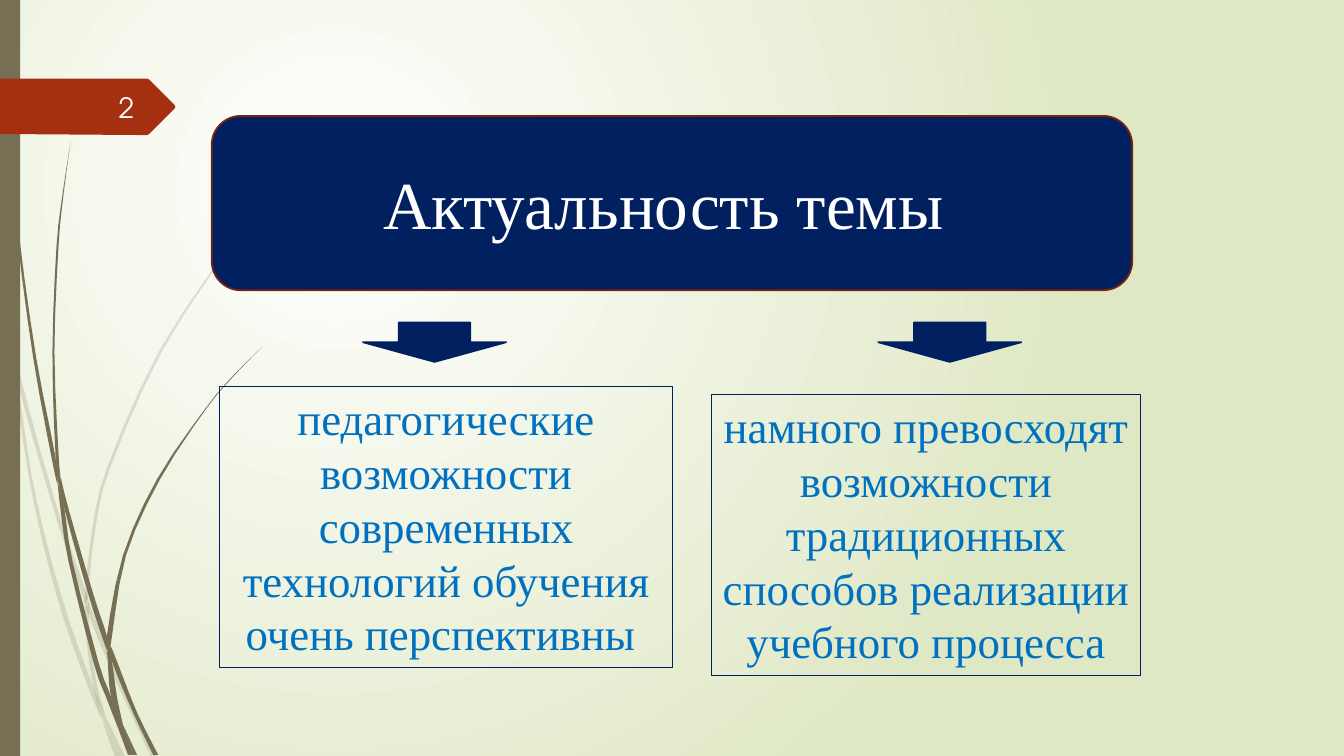
import pptx
import pptx.util
import pptx.dml.color
import pptx.enum.shapes
import pptx.enum.text
import pptx.oxml
import pptx.oxml.ns
from lxml import etree

Inches = pptx.util.Inches
KIND = pptx.enum.shapes.MSO_SHAPE
ALIGN = pptx.enum.text.PP_ALIGN
ANCHOR = pptx.enum.text.MSO_ANCHOR
FIT = pptx.enum.text.MSO_AUTO_SIZE

HEX = {"pale": "FFFFFF", "green": "DFE8C4", "olive": "766F54", "rust": "A53010",
       "edge": "7A240C", "navy": "002060", "blue": "0070C0", "white": "FFFFFF",
       "page": "FEFFFF"}
SERIF = "Times New Roman"
SANS = "TeX Gyre Adventor"

TITLE = ("Актуальность темы ", (2.1, 1.15, 9.13, 1.73))
CLAIMS = [
    ("педагогические возможности современных технологий обучения очень перспективны ",
     (2.18, 3.83, 4.49, 2.79)),
    ("намного превосходят возможности традиционных способов реализации учебного процесса",
     (7.06, 3.91, 4.25, 2.79)),
]
ARROWS = [(3.6, 3.2, 1.42, 0.39), (8.71, 3.2, 1.42, 0.39)]
PAGE = ("2", (0.58, 0.86, 0.85, 0.4))
BADGE = [(0, 0.78), (1.46, 0.78), (1.48, 0.79), (1.73, 1.04), (1.74, 1.06),
         (1.73, 1.08), (1.48, 1.33), (1.46, 1.34), (1.36, 1.34), (0, 1.33)]

FAINT = [
    [(2.82, 0, 0), (2.99, 0, 0.04), (3.22, 0.06, 0.09), (3.5, 0.11, 0.11)],
    [(3.45, 0.14, 0.14), (3.76, 0.17, 0.21), (4.33, 0.32, 0.36), (5.21, 0.58, 0.62),
     (5.86, 0.8, 0.85), (5.99, 0.84, 0.84)],
    [(5.96, 0.88, 0.88), (6.1, 0.88, 0.93), (6.52, 1.05, 1.1), (6.93, 1.23, 1.27),
     (7.51, 1.5, 1.55)],
    [(7.11, 1.05, 1.05), (7.51, 1.19, 1.24)],
    [(3.5, 0.11, 0.11), (3.76, 0.14, 0.17), (4.69, 0.28, 0.31), (5.45, 0.44, 0.48),
     (6.2, 0.65, 0.7), (6.83, 0.88, 0.93), (7.14, 1.01, 1.01)],
    [(5.99, 0.84, 0.84), (6.1, 0.84, 0.88), (6.46, 0.87, 0.91), (6.83, 0.93, 0.97),
     (7.11, 1.05, 1.05)],
    [(1.53, 3.12, 3.12), (1.98, 2.67, 2.68), (2.45, 2.27, 2.29), (3.48, 1.58, 1.61),
     (4.62, 1.07, 1.1), (5.22, 0.92, 0.95), (5.84, 0.85, 0.88), (5.96, 0.88, 0.88)],
    [(7.14, 1.01, 1.01), (7.51, 1.14, 1.19)],
    [(5.86, 0.85, 0.85), (5.98, 0.84, 0.88), (6.1, 0.88, 0.88)],
    [(6.83, 0.93, 0.93), (7.09, 1, 1.04), (7.51, 1.19, 1.19)],
]
DARK = [
    [(0, 0.03, 0.04), (1.1, 0.07, 0.08), (2.33, 0.17, 0.19), (3.55, 0.33, 0.36),
     (4.53, 0.51, 0.55), (4.81, 0.57, 0.57)],
    [(4.72, 0.6, 0.6), (5.05, 0.64, 0.68), (5.91, 0.88, 0.93), (6.31, 1.01, 1.06),
     (6.45, 1.06, 1.06)],
    [(6.41, 1.1, 1.1), (6.56, 1.11, 1.16), (7.07, 1.32, 1.36), (7.49, 1.52, 1.57)],
    [(4.77, 0.57, 0.57), (5.05, 0.6, 0.64), (5.57, 0.68, 0.72), (6.58, 0.93, 0.98),
     (6.91, 1.05, 1.1), (7.22, 1.17, 1.17)],
    [(1.41, 0.7, 0.7), (1.93, 0.62, 0.63), (2.45, 0.56, 0.58), (3.49, 0.52, 0.54),
     (4.49, 0.55, 0.58), (4.72, 0.6, 0.6)],
    [(7.19, 1.22, 1.22), (7.49, 1.33, 1.36)],
    [(4.49, 0.55, 0.55), (4.75, 0.57, 0.6), (5.05, 0.64, 0.64)],
    [(3.44, 2.6, 2.6), (3.73, 2.31, 2.32), (4.05, 2.04, 2.05), (4.75, 1.56, 1.59),
     (5.51, 1.22, 1.25), (6.32, 1.06, 1.11), (6.41, 1.1, 1.1)],
    [(7.22, 1.17, 1.17), (7.49, 1.27, 1.31)],
    [(6.45, 1.06, 1.06), (6.56, 1.07, 1.11), (6.91, 1.1, 1.16), (7.19, 1.22, 1.22)],
    [(6.31, 1.06, 1.06), (6.43, 1.06, 1.1), (6.56, 1.11, 1.11)],
    [(6.91, 1.1, 1.1), (7.19, 1.16, 1.22), (7.49, 1.3, 1.33)],
]


def shade(name):
    return pptx.dml.color.RGBColor.from_string(HEX[name])


def style(shape, fill=None, line=None, width=1.25):
    shape.shadow.inherit = False
    if fill:
        shape.fill.solid()
        shape.fill.fore_color.rgb = shade(fill)
    else:
        shape.fill.background()
    if line:
        shape.line.color.rgb = shade(line)
        shape.line.width = pptx.util.Pt(width)
    else:
        shape.line.fill.background()
    return shape


def block(slide, kind, box, *look):
    return style(slide.shapes.add_shape(kind, *map(Inches, box)), *look)


def write(shape, words, size, font, color, align, anchor):
    frame = shape.text_frame
    frame.word_wrap = True
    frame.vertical_anchor = anchor
    line = frame.paragraphs[0]
    line.alignment = align
    run = line.add_run()
    run.text = words
    run.font.size = pptx.util.Pt(size)
    run.font.name = font
    run.font.color.rgb = shade(color)
    return frame


def outline(slide, points, fill):
    spots = [(Inches(x), Inches(y)) for x, y in points]
    build = slide.shapes.build_freeform(*spots[0])
    build.add_line_segments(spots[1:], close=True)
    return style(build.convert_to_shape(), fill)


def smooth(rows, steps=3):
    ends = [rows[0], *rows, rows[-1]]
    curve = []
    for knots in zip(ends, ends[1:], ends[2:], ends[3:]):
        for step in range(steps):
            t = step / steps
            curve.append([
                q + (t * (r - p) + t ** 2 * (2 * p - 5 * q + 4 * r - s)
                     + t ** 3 * (3 * q - p - 3 * r + s)) / 2
                for p, q, r, s in zip(*knots)])
    return curve + [rows[-1]]


def blade(slide, rows, alpha=None):
    curve = smooth(rows)
    points = [(x, y) for y, x, _ in curve] + [(x, y) for y, _, x in reversed(curve)]
    shape = outline(slide, points, "olive")
    if alpha:
        tone = shape._element.spPr.find(".//" + pptx.oxml.ns.qn("a:srgbClr"))
        etree.SubElement(tone, pptx.oxml.ns.qn("a:alpha"), val=str(alpha * 1000))


def backdrop(slide):
    fill = slide.background.fill
    fill.gradient()
    for stop, name, place in zip(fill.gradient_stops, ("pale", "green"), (0, 1)):
        stop.color.rgb = shade(name)
        stop.position = place
    qn = pptx.oxml.ns.qn
    old = slide._element.find(".//" + qn("a:lin"))
    ring = etree.Element(qn("a:path"), attrib={"path": "circle"})
    etree.SubElement(ring, qn("a:fillToRect"), l="50000", t="50000",
                     r="100000", b="100000")
    old.getparent().replace(old, ring)


def main():
    """Build the slide on the relevance of the topic."""
    deck = pptx.Presentation()
    deck.slide_width, deck.slide_height = Inches(13.33), Inches(7.5)
    slide = deck.slides.add_slide(deck.slide_layouts[6])
    backdrop(slide)
    for rows in FAINT:
        blade(slide, rows, 20)
    for rows in DARK:
        blade(slide, rows)
    block(slide, KIND.RECTANGLE, (0, 0, 0.2, 7.5), "olive")
    outline(slide, BADGE, "rust")
    for words, box in CLAIMS:
        shape = block(slide, KIND.RECTANGLE, box, None, "navy", 0.75)
        frame = write(shape, words, 32, SERIF, "blue", ALIGN.CENTER, ANCHOR.TOP)
        frame.auto_size = FIT.SHAPE_TO_FIT_TEXT
    words, box = TITLE
    shape = block(slide, KIND.FLOWCHART_ALTERNATE_PROCESS, box, "navy", "edge")
    write(shape, words, 48, SERIF, "white", ALIGN.CENTER, ANCHOR.MIDDLE)
    for box in ARROWS:
        block(slide, KIND.DOWN_ARROW, box, "navy", "navy")
    words, box = PAGE
    label = slide.shapes.add_textbox(*map(Inches, box))
    write(label, words, 20, SANS, "page", ALIGN.RIGHT, ANCHOR.MIDDLE)
    deck.save("out.pptx")


if __name__ == "__main__":
    main()
